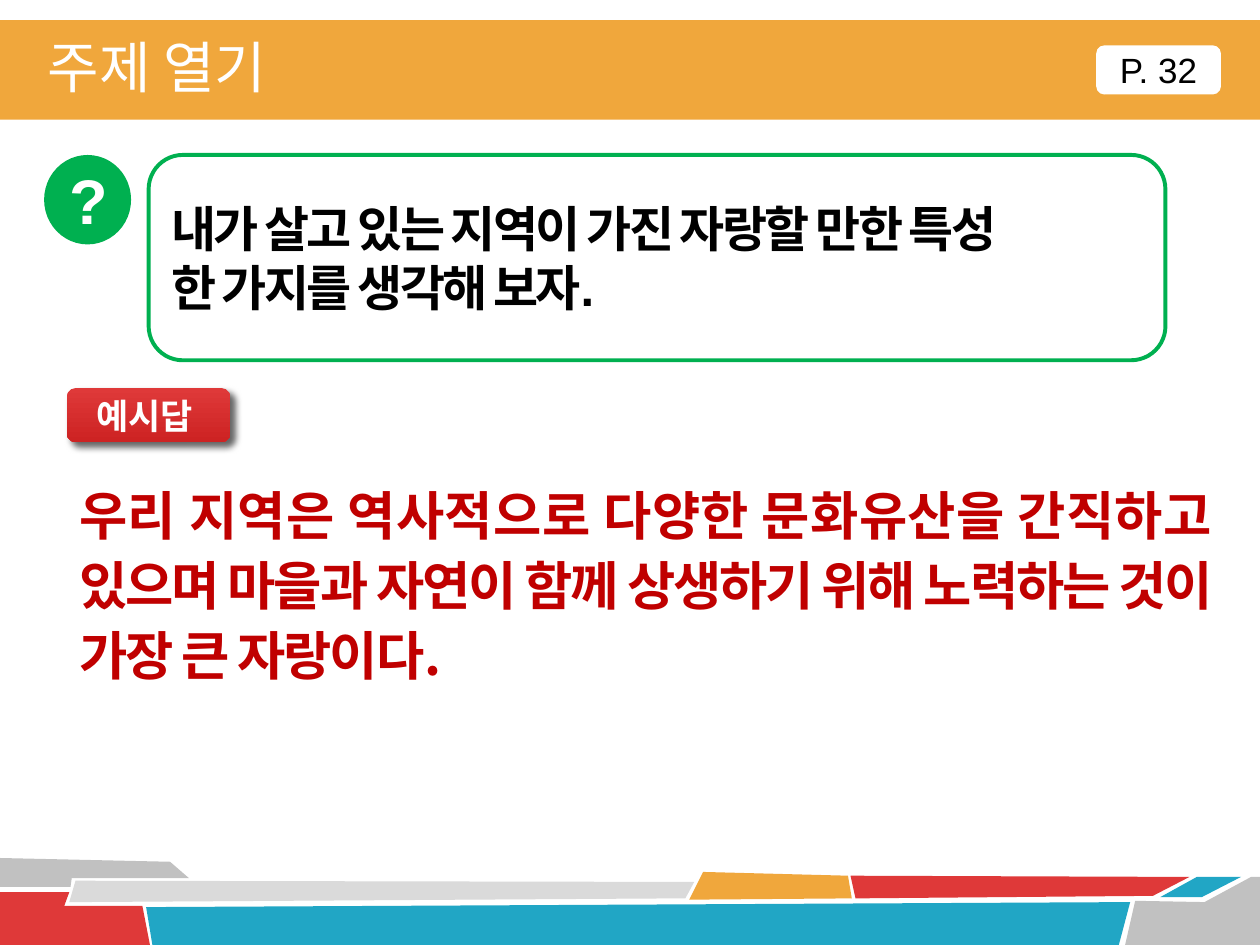
from dataclasses import dataclass

from lxml import etree
from pptx import Presentation
from pptx.dml.color import RGBColor
from pptx.enum.shapes import MSO_SHAPE
from pptx.enum.text import MSO_ANCHOR, MSO_AUTO_SIZE, PP_ALIGN
from pptx.oxml.ns import qn
from pptx.util import Inches, Pt

RECT, ROUND, OVAL = MSO_SHAPE.RECTANGLE, MSO_SHAPE.ROUNDED_RECTANGLE, MSO_SHAPE.OVAL
LEFT, CENTER, JUSTIFY = PP_ALIGN.LEFT, PP_ALIGN.CENTER, PP_ALIGN.JUSTIFY
MIDDLE, GROW = MSO_ANCHOR.MIDDLE, MSO_AUTO_SIZE.SHAPE_TO_FIT_TEXT

WHITE = RGBColor(0xFF, 0xFF, 0xFF)
BLACK = RGBColor(0, 0, 0)
ORANGE = RGBColor(0xF0, 0xA7, 0x3C)
GREEN = RGBColor(0, 0xB0, 0x50)
RED = RGBColor(0xDF, 0x39, 0x39)
DEEP = RGBColor(0xCD, 0x23, 0x23)
CRIMSON = RGBColor(0xC0, 0, 0)
BLUE = RGBColor(0x21, 0xA6, 0xC5)
GRAY = RGBColor(0xC1, 0xC1, 0xC1)
PALE = RGBColor(0xDA, 0xDA, 0xDA)
LATIN, HANGUL = "Arial", "Noto Sans CJK KR"


@dataclass
class Tile:
    color: RGBColor
    points: list[tuple[float, float]]


@dataclass
class Style:
    size: int
    color: RGBColor
    face: str = HANGUL
    bold: bool = False
    align: PP_ALIGN = LEFT
    track: float = 0


@dataclass
class Panel:
    kind: MSO_SHAPE
    box: tuple[float, float, float, float]
    fill: RGBColor
    lines: tuple[str, ...] = ()
    style: Style | None = None


TILES = [
    Tile(GRAY, [(0, 6.81), (1.35, 6.84), (1.5, 6.97), (0.57, 6.97), (0.56, 7.04), (0, 7.04)]),
    Tile(RED, [(0, 7.08), (0.55, 7.08), (0.51, 7.19), (1.13, 7.19), (1.19, 7.5), (0, 7.5)]),
    Tile(PALE, [(0.6, 6.99), (5.51, 7), (5.44, 7.13), (0.55, 7.16)]),
    Tile(BLUE, [(1.16, 7.2), (8.97, 7.16), (8.88, 7.5), (1.21, 7.5)]),
    Tile(ORANGE, [(5.58, 6.92), (6.73, 6.95), (6.76, 7.13), (5.47, 7.14)]),
    Tile(RED, [(6.75, 6.95), (9.44, 6.96), (9.15, 7.11), (6.79, 7.13)]),
    Tile(BLUE, [(9.5, 6.96), (9.85, 6.96), (9.54, 7.12), (9.21, 7.12)]),
    Tile(GRAY, [(9.01, 7.15), (9.56, 7.16), (9.93, 6.96), (10, 6.96), (10, 7.5), (8.93, 7.5)]),
]
BAND = Panel(RECT, (0, 0.16, 10, 0.79), ORANGE)
PAGE = Panel(ROUND, (8.7, 0.36, 0.99, 0.39), WHITE, ("P. 32",),
             Style(20, BLACK, LATIN, align=CENTER))
MARK = Panel(OVAL, (0.35, 1.23, 0.69, 0.71), GREEN, ("?",),
             Style(36, WHITE, LATIN, True, CENTER))
TASK = Panel(ROUND, (1.18, 1.23, 8.07, 1.63), WHITE,
             ("내가 살고 있는 지역이 가진 자랑할 만한 특성", "한 가지를 생각해 보자."),
             Style(28, BLACK, LATIN, True, track=-1.5))
LABEL = Panel(ROUND, (0.53, 3.08, 1.3, 0.43), RED, ("예시답 ",),
              Style(20, WHITE, bold=True, align=CENTER))
ANSWER = ("우리 지역은 역사적으로 다양한 문화유산을 간직하고 있으며 마을과 자연이 "
          "함께 상생하기 위해 노력하는 것이 가장 큰 자랑이다.")


def write(frame, lines: tuple[str, ...], style: Style) -> None:
    frame.text = "\n".join(lines)
    for para in frame.paragraphs:
        para.alignment = style.align
        font = para.font
        font.size, font.bold, font.name = Pt(style.size), style.bold, style.face
        font.color.rgb = style.color
        props = para._p.pPr.find(qn("a:defRPr"))
        etree.SubElement(props, qn("a:ea"), typeface=HANGUL)
        if style.track:
            props.set("spc", str(round(style.track * 100)))


def draw_tile(shapes, tile: Tile) -> None:
    points = [(Inches(x), Inches(y)) for x, y in tile.points]
    pen = shapes.build_freeform(*points[0])
    pen.add_line_segments(points[1:], close=True)
    shape = pen.convert_to_shape()
    shape.shadow.inherit = False
    shape.fill.solid()
    shape.fill.fore_color.rgb = tile.color
    shape.line.fill.background()


def draw_panel(shapes, panel: Panel):
    shape = shapes.add_shape(panel.kind, *map(Inches, panel.box))
    shape.shadow.inherit = False
    shape.fill.solid()
    shape.fill.fore_color.rgb = panel.fill
    shape.line.fill.background()
    if panel.style:
        shape.text_frame.vertical_anchor = MIDDLE
        write(shape.text_frame, panel.lines, panel.style)
    return shape


def draw_text(shapes, box: tuple[float, ...], text: str, style: Style, wrap: bool):
    frame = shapes.add_textbox(*map(Inches, box)).text_frame
    frame.word_wrap = wrap
    frame.auto_size = GROW
    write(frame, (text,), style)
    return frame


def raise_label(shape) -> None:
    """Give the label a vertical gradient and a soft drop shadow."""
    shape.fill.gradient()
    shape.fill.gradient_angle = 270
    for stop, color in zip(shape.fill.gradient_stops, (RED, DEEP)):
        stop.color.rgb = color
    effects = shape._element.spPr.find(qn("a:effectLst"))
    shade = etree.SubElement(effects, qn("a:outerShdw"), blurRad=str(Pt(4)),
                             dist=str(Pt(4)), dir="2700000", algn="tl", rotWithShape="0")
    color = etree.SubElement(shade, qn("a:srgbClr"), val=str(BLACK))
    etree.SubElement(color, qn("a:alpha"), val="60000")


def main() -> None:
    deck = Presentation()
    deck.slide_width, deck.slide_height = Inches(10), Inches(7.5)
    shapes = deck.slides.add_slide(deck.slide_layouts[6]).shapes
    for tile in TILES:
        draw_tile(shapes, tile)
    for panel in (BAND, PAGE, MARK):
        draw_panel(shapes, panel)
    task = draw_panel(shapes, TASK)
    task.line.color.rgb = GREEN
    task.line.width = Pt(2.25)
    raise_label(draw_panel(shapes, LABEL))
    draw_text(shapes, (0.28, 0.21, 2.15, 0.64), "주제 열기", Style(32, WHITE), False)
    answer = draw_text(shapes, (0.53, 3.73, 9.18, 1.74), ANSWER,
                       Style(30, CRIMSON, bold=True, align=JUSTIFY, track=-1.2), True)
    answer.paragraphs[0].line_spacing = Pt(40)
    deck.save("out.pptx")


if __name__ == "__main__":
    main()
